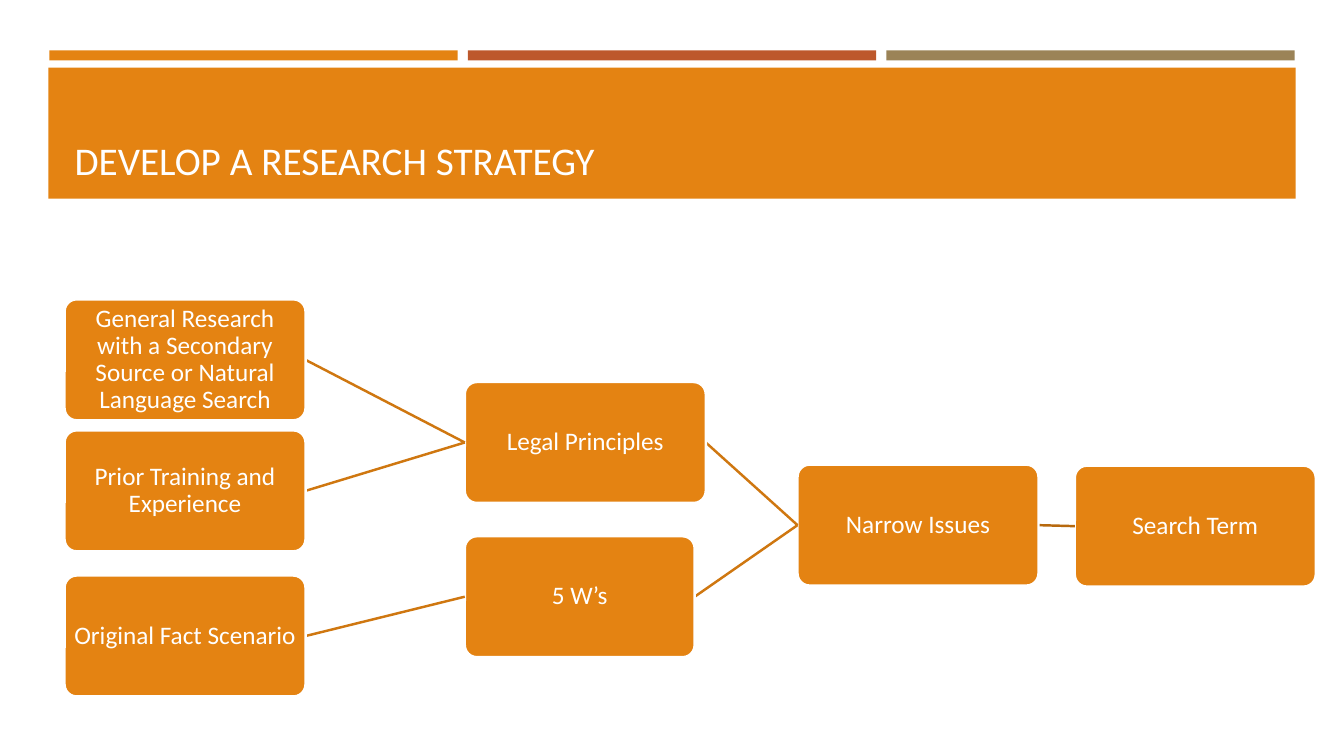
import pptx
import pptx.dml.color
import pptx.enum.shapes
import pptx.enum.text
import pptx.oxml.ns
import pptx.util
from lxml import etree

Inches, Pt = pptx.util.Inches, pptx.util.Pt
RGBColor = pptx.dml.color.RGBColor
MSO_SHAPE = pptx.enum.shapes.MSO_SHAPE
PP_ALIGN = pptx.enum.text.PP_ALIGN
MSO_ANCHOR = pptx.enum.text.MSO_ANCHOR

ORANGE = RGBColor(0xE4, 0x83, 0x12)
RUST = RGBColor(0xBD, 0x58, 0x2C)
TAN = RGBColor(0x9B, 0x83, 0x57)
DARK = RGBColor(0xB7, 0x69, 0x0E)
AMBER = RGBColor(0xCF, 0x77, 0x10)
WHITE = RGBColor(0xFF, 0xFF, 0xFF)
FONT = "Calibri"

TITLE = "DEVELOP A RESEARCH STRATEGY"
STRIPES = [ORANGE, RUST, TAN]
# key: (text, left, top, width, key of the box it leads to, link colour)
BOXES = {
    "term": ("Search Term", 10.66, 4.62, 2.39, None, None),
    "issues": ("Narrow Issues", 7.91, 4.61, 2.39, "term", DARK),
    "legal": ("Legal Principles", 4.61, 3.79, 2.39, "issues", AMBER),
    "general": ("General Research with a Secondary Source or Natural Language Search",
                0.64, 2.97, 2.39, "legal", AMBER),
    "prior": ("Prior Training and Experience", 0.64, 4.27, 2.39, "legal", AMBER),
    "ws": ("5 W’s", 4.61, 5.32, 2.28, "issues", AMBER),
    "facts": ("Original Fact Scenario", 0.64, 5.71, 2.39, "ws", AMBER),
}
BOX_H = 1.2
LEFT_SITE, RIGHT_SITE = 1, 3


def add_block(shapes, kind, left, top, width, height, fill):
    block = shapes.add_shape(kind, Inches(left), Inches(top), Inches(width), Inches(height))
    block.shadow.inherit = False
    block.fill.solid()
    block.fill.fore_color.rgb = fill
    block.line.fill.background()
    return block


def write(frame, text, size, inset, anchor):
    frame.word_wrap = True
    frame.auto_size = pptx.enum.text.MSO_AUTO_SIZE.NONE
    frame.vertical_anchor = anchor
    frame.margin_left = frame.margin_right = Inches(inset)
    frame.margin_top = frame.margin_bottom = Inches(0.05)
    para = frame.paragraphs[0]
    run = para.add_run()
    run.text = text
    run.font.name, run.font.size = FONT, Pt(size)
    run.font.color.rgb = WHITE
    return para


def add_link(shapes, start, end, color):
    link = shapes.add_connector(pptx.enum.shapes.MSO_CONNECTOR.STRAIGHT,
                                *(Inches(n) for n in start + end))
    link.line.color.rgb = color
    link.line.width = Pt(1.75)
    props = link.element.find(pptx.oxml.ns.qn("p:spPr"))
    etree.SubElement(props, pptx.oxml.ns.qn("a:effectLst"))
    return link


def add_box(shapes, text, left, top, width):
    box = add_block(shapes, MSO_SHAPE.ROUNDED_RECTANGLE, left, top, width, BOX_H, ORANGE)
    box.adjustments[0] = 0.1
    box.line.color.rgb = WHITE
    box.line.width = Pt(1.75)
    para = write(box.text_frame, text, 18, 0.05, MSO_ANCHOR.MIDDLE)
    para.alignment = PP_ALIGN.CENTER
    para.line_spacing = 0.9
    return box


def main():
    deck = pptx.Presentation()
    deck.slide_width, deck.slide_height = Inches(13.33), Inches(7.5)
    slide = deck.slides.add_slide(deck.slide_layouts[5])
    shapes = slide.shapes

    for i, color in enumerate(STRIPES):
        add_block(shapes, MSO_SHAPE.RECTANGLE, 0.49 + 4.15 * i, 0.5, 4.05, 0.1, color)
    add_block(shapes, MSO_SHAPE.RECTANGLE, 0.48, 0.67, 12.37, 1.3, ORANGE)

    title = shapes.title
    title.left, title.top = Inches(0.64), Inches(0.77)
    title.width, title.height = Inches(12.06), Inches(1.11)
    para = write(title.text_frame, TITLE, 28, 0.1, MSO_ANCHOR.BOTTOM)
    para.alignment = PP_ALIGN.LEFT
    para.line_spacing = 0.9
    shapes.element.append(title.element)  # lift the title above its band

    # Each link goes under the box it leaves and over the box it meets.
    made = {}
    for key, (text, left, top, width, goal, color) in BOXES.items():
        link = None
        if goal:
            goal_x, goal_y = BOXES[goal][1:3]
            link = add_link(shapes, (left + width, top + BOX_H / 2),
                            (goal_x, goal_y + BOX_H / 2), color)
        made[key] = add_box(shapes, text, left, top, width)
        if link:
            link.begin_connect(made[key], RIGHT_SITE)
            link.end_connect(made[goal], LEFT_SITE)

    deck.save("out.pptx")


if __name__ == "__main__":
    main()
